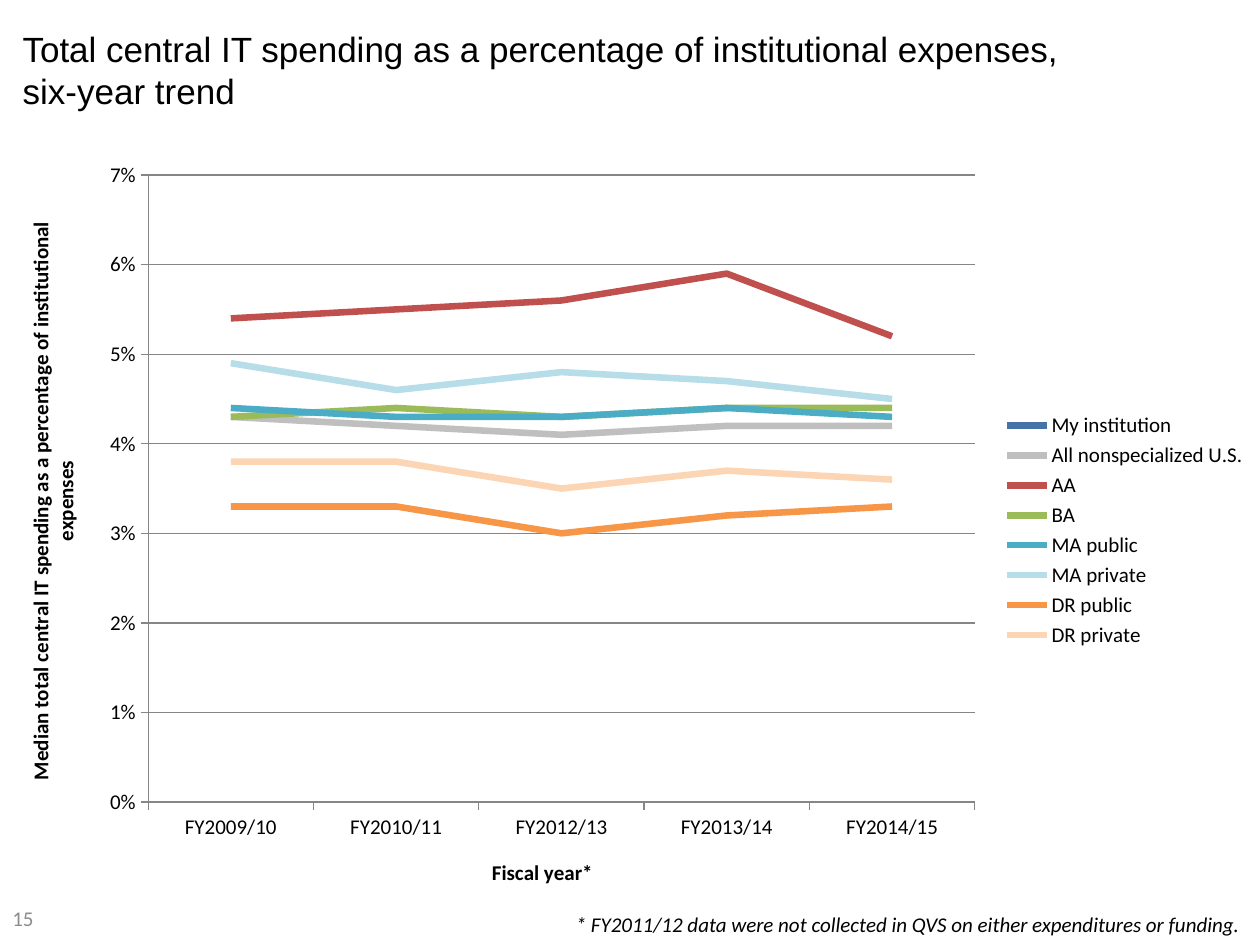
from dataclasses import dataclass

from pptx import Presentation
from pptx.chart.data import CategoryChartData
from pptx.dml.color import RGBColor
from pptx.enum.chart import XL_CHART_TYPE, XL_LEGEND_POSITION, XL_MARKER_STYLE, XL_TICK_MARK
from pptx.enum.text import MSO_ANCHOR, MSO_AUTO_SIZE, PP_ALIGN
from pptx.util import Cm, Pt


@dataclass(frozen=True)
class Theme:
    ink: str = "000000"
    pale: str = "8C8C8C"
    grid: str = "868686"
    head: str = "Arial"
    body: str = "Calibri"
    big: int = 20
    small: int = 12
    thin: float = 0.75
    thick: float = 3.75


THEME = Theme()
YEARS = ["FY2009/10", "FY2010/11", "FY2012/13", "FY2013/14", "FY2014/15"]
LINES = [
    ("My institution", "4672A8", [None] * len(YEARS)),
    ("All nonspecialized U.S.", "BFBFBF", [0.043, 0.042, 0.041, 0.042, 0.042]),
    ("AA", "C0504D", [0.054, 0.055, 0.056, 0.059, 0.052]),
    ("BA", "9BBB59", [0.043, 0.044, 0.043, 0.044, 0.044]),
    ("MA public", "4BACC6", [0.044, 0.043, 0.043, 0.044, 0.043]),
    ("MA private", "B7DEE8", [0.049, 0.046, 0.048, 0.047, 0.045]),
    ("DR public", "F79646", [0.033, 0.033, 0.03, 0.032, 0.033]),
    ("DR private", "FCD5B5", [0.038, 0.038, 0.035, 0.037, 0.036]),
]


def style(font, size=THEME.small, face=THEME.body, color=THEME.ink, bold=False, italic=False):
    font.size = Pt(size)
    font.name = face
    font.bold = bold
    font.italic = italic
    font.color.rgb = RGBColor.from_string(color)


def write(frame, text, align=PP_ALIGN.LEFT, **looks):
    para = frame.paragraphs[0]
    para.text = text
    para.alignment = align
    for run in para.runs:
        style(run.font, **looks)


def place(shape, box):
    shape.left, shape.top, shape.width, shape.height = map(Cm, box)


def stroke(line, color, width):
    line.color.rgb = RGBColor.from_string(color)
    line.width = Pt(width)


def add_title(slide, box):
    title = slide.shapes.title
    place(title, box)
    frame = title.text_frame
    frame.auto_size = MSO_AUTO_SIZE.NONE
    frame.vertical_anchor = MSO_ANCHOR.TOP
    write(frame, "Total central IT spending as a percentage of institutional expenses,\nsix-year trend",
          size=THEME.big, face=THEME.head)


def set_axis(axis, label):
    axis.major_tick_mark = XL_TICK_MARK.OUTSIDE
    axis.minor_tick_mark = XL_TICK_MARK.NONE
    stroke(axis.format.line, THEME.grid, THEME.thin)
    style(axis.tick_labels.font)
    write(axis.axis_title.text_frame, label, align=PP_ALIGN.CENTER, bold=True)


def add_trend(slide, box):
    data = CategoryChartData(number_format="0%")
    data.categories = YEARS
    for name, _, vals in LINES:
        data.add_series(name, vals)
    chart = slide.shapes.add_chart(XL_CHART_TYPE.LINE, *map(Cm, box), data).chart
    chart.has_title = False
    style(chart.font)
    chart.has_legend = True
    chart.legend.position = XL_LEGEND_POSITION.RIGHT
    chart.legend.include_in_layout = False
    style(chart.legend.font)

    plot = chart.plots[0]
    plot.vary_by_categories = False
    for line, (_, color, _) in zip(plot.series, LINES):
        line.smooth = False
        line.marker.style = XL_MARKER_STYLE.NONE
        stroke(line.format.line, color, THEME.thick)

    set_axis(chart.category_axis, "Fiscal year*")
    axis = chart.value_axis
    set_axis(axis, "Median total central IT spending as a percentage of institutional expenses")
    axis.minimum_scale, axis.maximum_scale, axis.major_unit = 0, 0.07, 0.01
    axis.tick_labels.number_format = "0%"
    axis.tick_labels.number_format_is_linked = False
    axis.has_major_gridlines = True
    stroke(axis.major_gridlines.format.line, THEME.grid, THEME.thin)


def add_note(slide, box, text, anchor=MSO_ANCHOR.TOP, **looks):
    frame = slide.shapes.add_textbox(*map(Cm, box)).text_frame
    frame.word_wrap = True
    frame.vertical_anchor = anchor
    write(frame, text, **looks)


def main():
    deck = Presentation()
    deck.slide_width, deck.slide_height = Cm(25.4), Cm(19.05)
    slide = deck.slides.add_slide(deck.slide_layouts[5])
    add_title(slide, (0.2, 0.43, 24.77, 2.54))
    add_trend(slide, (0, 2.97, 25.4, 15.44))
    add_note(slide, (0, 17.98, 2.74, 1.07), "15", anchor=MSO_ANCHOR.MIDDLE, color=THEME.pale)
    add_note(slide, (1.22, 18.26, 24.03, 0.76),
             "* FY2011/12 data were not collected in QVS on either expenditures or funding.",
             align=PP_ALIGN.RIGHT, italic=True)
    deck.save("out.pptx")


if __name__ == "__main__":
    main()
